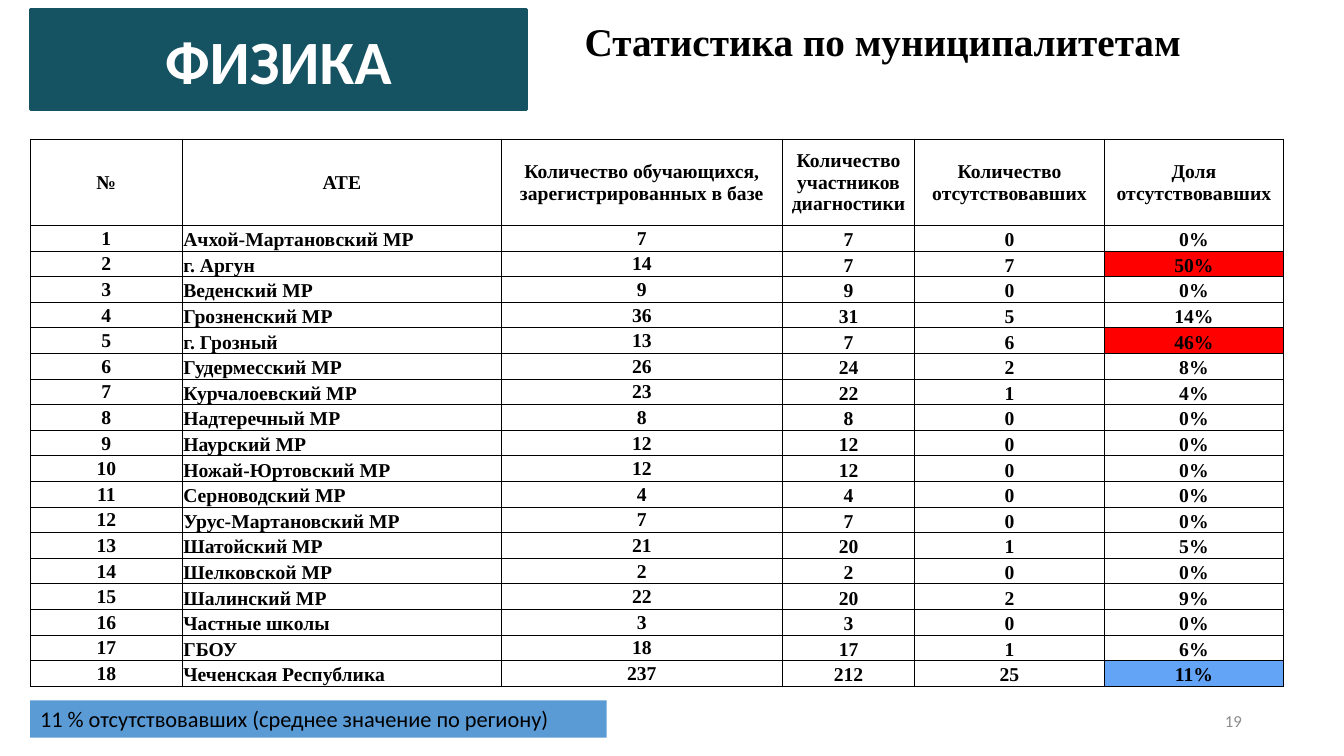
from lxml.etree import SubElement
from pptx import Presentation
from pptx.dml.color import RGBColor
from pptx.enum.shapes import MSO_SHAPE
from pptx.enum.text import MSO_ANCHOR, PP_ALIGN
from pptx.oxml.ns import qn
from pptx.util import Cm, Pt

COLORS = {
    "black": "000000",
    "white": "FFFFFF",
    "gray": "8C8C8C",
    "teal": "155262",
    "note": "5B9BD5",
    "alert": "FF0000",
    "total": "63A4F7",
}
HEADERS = [
    "№",
    "АТЕ",
    "Количество обучающихся, зарегистрированных в базе",
    "Количество участников диагностики",
    "Количество отсутствовавших",
    "Доля отсутствовавших",
]
DISTRICTS = [
    ("Ачхой-Мартановский МР", 7, 7),
    ("г. Аргун", 14, 7),
    ("Веденский МР", 9, 9),
    ("Грозненский МР", 36, 31),
    ("г. Грозный", 13, 7),
    ("Гудермесский МР", 26, 24),
    ("Курчалоевский МР", 23, 22),
    ("Надтеречный МР", 8, 8),
    ("Наурский МР", 12, 12),
    ("Ножай-Юртовский МР", 12, 12),
    ("Серноводский МР", 4, 4),
    ("Урус-Мартановский МР", 7, 7),
    ("Шатойский МР", 21, 20),
    ("Шелковской МР", 2, 2),
    ("Шалинский МР", 22, 20),
    ("Частные школы", 3, 3),
    ("ГБОУ", 18, 17),
    ("Чеченская Республика", 237, 212),
]
COLUMN_WIDTHS = [3.84, 8.03, 7.09, 3.33, 4.78, 4.52]
HEADER_HEIGHT = 2.18
ALERT_SHARE = 40


def color(name):
    """Return the named colour."""
    return RGBColor.from_string(COLORS[name])


def write(frame, text, size, font="Calibri", ink="black", bold=False, align=PP_ALIGN.LEFT):
    """Write one formatted run into the first paragraph of a text frame."""
    frame.word_wrap = True
    paragraph = frame.paragraphs[0]
    paragraph.alignment = align
    run = paragraph.add_run()
    run.text = text
    run.font.size = Pt(size)
    run.font.name = font
    run.font.bold = bold
    run.font.color.rgb = color(ink)


def add_title(slide, left, top, width, height):
    """Place the slide title in its placeholder."""
    title = slide.shapes.title
    title.left, title.top, title.width, title.height = map(Cm, (left, top, width, height))
    title.text_frame.vertical_anchor = MSO_ANCHOR.TOP
    write(title.text_frame, "Статистика по муниципалитетам", 28, "Times New Roman", bold=True)


def add_panel(slide, left, top, width, height, fill):
    """Add a filled rectangle without outline or shadow."""
    panel = slide.shapes.add_shape(MSO_SHAPE.RECTANGLE, Cm(left), Cm(top), Cm(width), Cm(height))
    panel.shadow.inherit = False
    panel.fill.solid()
    panel.fill.fore_color.rgb = color(fill)
    panel.line.fill.background()
    return panel


def add_subject(slide, left, top, width, height):
    """Add the subject badge."""
    badge = add_panel(slide, left, top, width, height, "teal")
    badge.line.color.rgb = color("teal")
    badge.line.width = Pt(2.25)
    badge.text_frame.vertical_anchor = MSO_ANCHOR.MIDDLE
    write(badge.text_frame, "ФИЗИКА", 44, ink="white", bold=True, align=PP_ALIGN.CENTER)


def add_footer(slide, left, top, width, height):
    """Add the regional average note and the page number."""
    note = add_panel(slide, left, top, 14.53, 0.94, "note")
    note.text_frame.vertical_anchor = MSO_ANCHOR.TOP
    write(note.text_frame, "11 % отсутствовавших (среднее значение по региону)", 16)
    number_width = 7.62
    number = slide.shapes.add_textbox(
        Cm(left + width - number_width), Cm(top), Cm(number_width), Cm(height)
    )
    number.text_frame.vertical_anchor = MSO_ANCHOR.MIDDLE
    write(number.text_frame, "19", 12, ink="gray", align=PP_ALIGN.RIGHT)


def add_borders(cell):
    """Draw thin black lines on all four sides of a cell."""
    properties = cell._tc.get_or_add_tcPr()
    for side in ("a:lnL", "a:lnR", "a:lnT", "a:lnB"):
        line = SubElement(properties, qn(side), w=str(Pt(0.5)))
        fill = SubElement(line, qn("a:solidFill"))
        SubElement(fill, qn("a:srgbClr"), val=COLORS["black"])


def fill_cell(cell, text, align, anchor, fill=None):
    """Format one table cell and write its text."""
    cell.margin_left = cell.margin_top = cell.margin_right = Cm(0.02)
    cell.margin_bottom = 0
    cell.vertical_anchor = anchor
    add_borders(cell)
    if fill:
        cell.fill.solid()
        cell.fill.fore_color.rgb = color(fill)
    else:
        cell.fill.background()
    write(cell.text_frame, text, 14, "Times New Roman", bold=True, align=align)


def add_statistics(slide, left, top, width, height):
    """Add the table of registered, present and absent pupils by district."""
    frame = slide.shapes.add_table(
        len(DISTRICTS) + 1, len(HEADERS), Cm(left), Cm(top), Cm(width), Cm(height)
    )
    table = frame.table
    table.first_row = table.horz_banding = False
    for column, column_width in zip(table.columns, COLUMN_WIDTHS):
        column.width = Cm(column_width)
    for row in table.rows:
        row.height = Cm((height - HEADER_HEIGHT) / len(DISTRICTS))
    table.rows[0].height = Cm(HEADER_HEIGHT)
    for index, header in enumerate(HEADERS):
        fill_cell(table.cell(0, index), header, PP_ALIGN.CENTER, MSO_ANCHOR.MIDDLE)
    for number, (name, registered, present) in enumerate(DISTRICTS, 1):
        absent = registered - present
        share = round(100 * absent / registered)
        values = [number, name, registered, present, absent, f"{share}%"]
        highlight = "alert" if share > ALERT_SHARE else None
        if number == len(DISTRICTS):
            highlight = "total"
        for index, value in enumerate(values):
            fill_cell(
                table.cell(number, index),
                str(value),
                PP_ALIGN.LEFT if index == 1 else PP_ALIGN.CENTER,
                MSO_ANCHOR.MIDDLE if index in (0, 2) else MSO_ANCHOR.BOTTOM,
                highlight if index == 5 else None,
            )


def main():
    """Build and save the presentation."""
    presentation = Presentation()
    presentation.slide_width = Cm(33.87)
    presentation.slide_height = Cm(19.05)
    slide = presentation.slides.add_slide(presentation.slide_layouts[5])
    add_title(slide, 14.48, 0.3, 17.48, 1.45)
    add_footer(slide, 0.76, 17.65, 30.79, 1.02)
    add_subject(slide, 0.76, 0.23, 12.52, 2.54)
    add_statistics(slide, 0.76, 3.5, sum(COLUMN_WIDTHS), 13.8)
    presentation.save("out.pptx")


if __name__ == "__main__":
    main()
